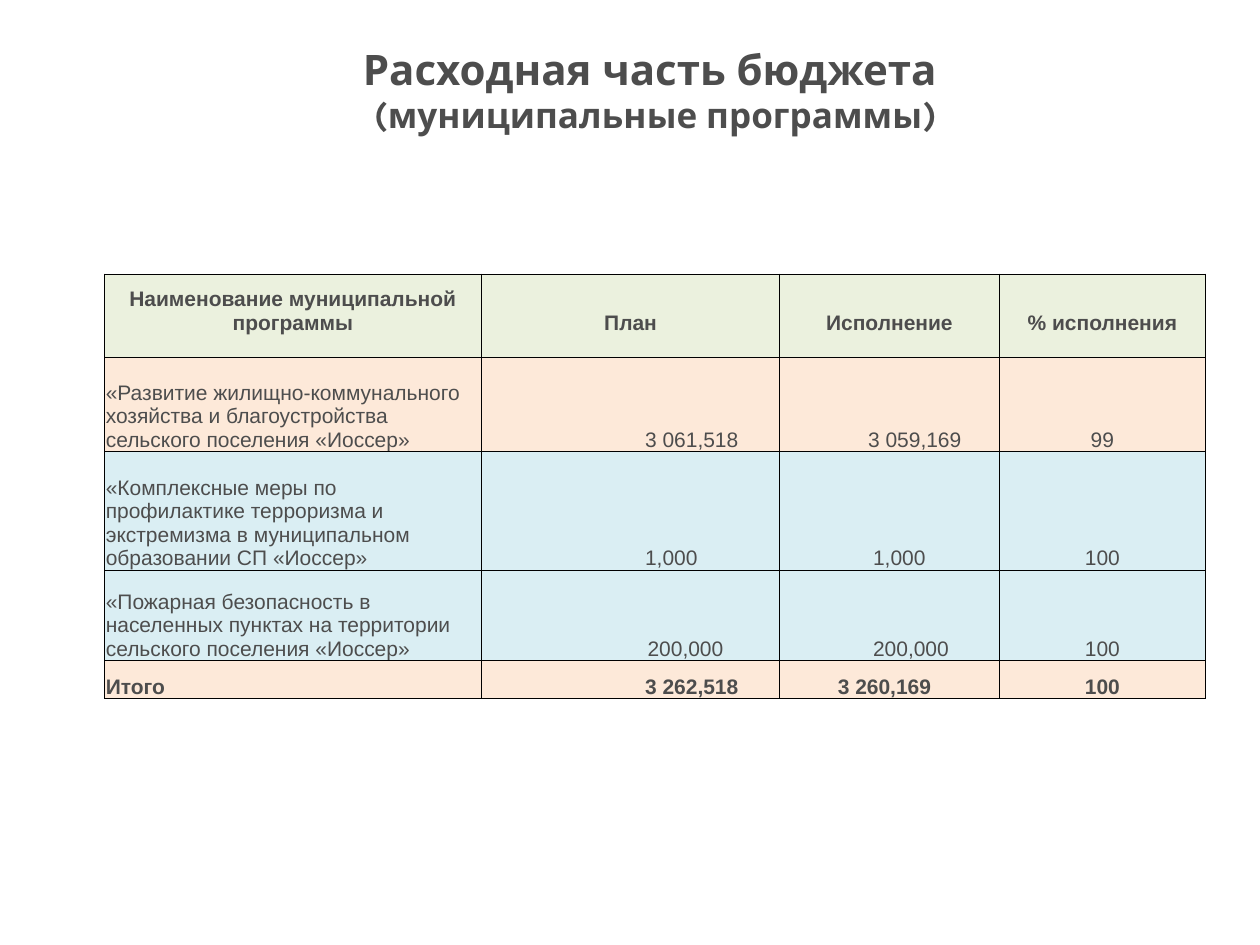
from dataclasses import dataclass
from pptx import Presentation, util as u
from pptx.dml.color import RGBColor
from pptx.enum import text
from pptx.oxml import parse_xml
from pptx.oxml.ns import nsdecls


@dataclass(frozen=True)
class Theme:
    ink: str = "4D4D4D"
    line: str = "000000"
    green: str = "EBF1DE"
    peach: str = "FDE9D9"
    blue: str = "DAEEF3"
    head: str = "Karla"
    body: str = "Arial"
    big: int = 24
    mid: int = 20
    small: int = 12
    rule: float = 0.5


class Deck:
    def __init__(self, theme, wide, high):
        self.theme = theme
        self.prs = Presentation()
        self.prs.slide_width, self.prs.slide_height = u.Inches(wide), u.Inches(high)
        self.slide = self.prs.slides.add_slide(self.prs.slide_layouts[6])

    def area(self, x, y, w, h):
        """Turn shares of the slide into lengths."""
        wide, high = self.prs.slide_width, self.prs.slide_height
        return int(x * wide), int(y * high), int(w * wide), int(h * high)

    def style(self, font, name, size, bold):
        font.name, font.size, font.bold = name, u.Pt(size), bold
        font.color.rgb = RGBColor.from_string(self.theme.ink)

    def title(self, lines, *box):
        frame = self.slide.shapes.add_textbox(*self.area(*box)).text_frame
        frame.word_wrap = True
        frame.vertical_anchor = text.MSO_ANCHOR.MIDDLE
        para = frame.paragraphs[0]
        para.alignment = text.PP_ALIGN.CENTER
        for i, (line, size) in enumerate(lines):
            if i:
                para.add_line_break()
            run = para.add_run()
            run.text = line
            self.style(run.font, self.theme.head, size, True)

    def edge(self, cell):
        props = cell._tc.get_or_add_tcPr()
        for i, side in enumerate(("lnL", "lnR", "lnT", "lnB")):
            props.insert(i, parse_xml(
                f'<a:{side} {nsdecls("a")} w="{u.Pt(self.theme.rule)}"><a:solidFill>'
                f'<a:srgbClr val="{self.theme.line}"/></a:solidFill></a:{side}>'))

    def cell(self, cell, words, fill, bold, left, foot):
        """A left inset of None centres the words."""
        cell.fill.solid()
        cell.fill.fore_color.rgb = RGBColor.from_string(fill)
        cell.vertical_anchor = text.MSO_ANCHOR.BOTTOM
        cell.margin_left = u.Inches(left or 0.01)
        cell.margin_right = cell.margin_top = u.Inches(0.01)
        cell.margin_bottom = u.Inches(foot)
        cell.text = words
        para = cell.text_frame.paragraphs[0]
        para.alignment = text.PP_ALIGN.CENTER if left is None else text.PP_ALIGN.LEFT
        self.style(para.font, self.theme.body, self.theme.small, bold)
        self.edge(cell)

    def table(self, rows, x, y, cols, highs):
        table = self.slide.shapes.add_table(
            len(rows), len(cols), *self.area(x, y, sum(cols), sum(highs))).table
        for col, share in zip(table.columns, cols):
            col.width = int(share * self.prs.slide_width)
        for i, (words, fill, bold, lefts, foot) in enumerate(rows):
            table.rows[i].height = int(highs[i] * self.prs.slide_height)
            for j, word in enumerate(words):
                self.cell(table.cell(i, j), word, fill, bold, lefts[j], foot)


def main():
    look = Theme()
    deck = Deck(look, 10, 7.5)

    # Heading
    deck.title([("Расходная часть бюджета ", look.big),
                ("(муниципальные программы)", look.mid)], 0.13, 0.06, 0.78, 0.07)

    # Rows: words, fill, bold, left insets, bottom inset
    rows = [
        (("Наименование муниципальной программы", "План", "Исполнение", "% исполнения"),
         look.green, True, (None,) * 4, 0.18),
        (("«Развитие жилищно-коммунального хозяйства и благоустройства "
          "сельского поселения «Иоссер»", "3 061,518", "3 059,169", "99"),
         look.peach, False, (0.01, 1.3, 0.7, None), 0),
        (("«Комплексные меры по профилактике терроризма и экстремизма "
          "в муниципальном образовании СП «Иоссер»", "1,000", "1,000", "100"),
         look.blue, False, (0.01, 1.3, 0.74, None), 0),
        (("«Пожарная безопасность в населенных пунктах на территории "
          "сельского поселения «Иоссер»", "200,000", "200,000", "100"),
         look.blue, False, (0.01, 1.32, 0.74, None), 0),
        (("Итого", "3 262,518", "3 260,169", "100"),
         look.peach, True, (0.01, 1.3, 0.46, None), 0),
    ]

    # Budget table, row heights in inches shared over the slide
    highs = [h / 7.5 for h in (0.66, 0.75, 0.94, 0.72, 0.3)]
    deck.table(rows, 0.083, 0.29, (0.299, 0.237, 0.174, 0.164), highs)

    deck.prs.save("out.pptx")


if __name__ == "__main__":
    main()
